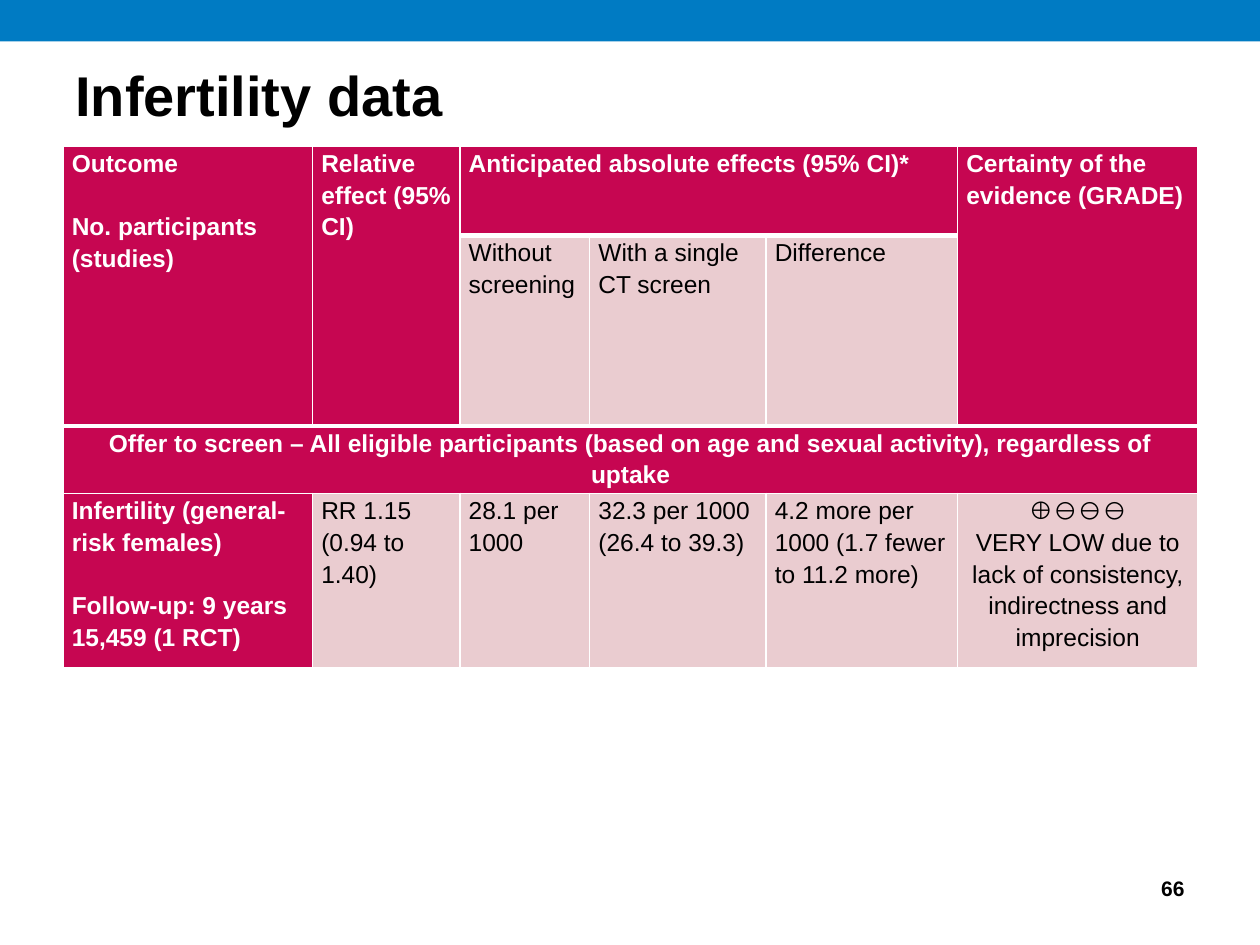
"""Build the infertility data slide with its evidence table."""
from dataclasses import dataclass

from lxml import etree
from pptx import Presentation
from pptx.dml.color import RGBColor
from pptx.enum.shapes import MSO_SHAPE
from pptx.enum.text import MSO_ANCHOR, PP_ALIGN
from pptx.oxml.ns import qn
from pptx.util import Inches, Pt

RECTANGLE = MSO_SHAPE.RECTANGLE
MIDDLE = MSO_ANCHOR.MIDDLE
LEFT, CENTER, RIGHT = PP_ALIGN.LEFT, PP_ALIGN.CENTER, PP_ALIGN.RIGHT
FONT = "Arial"
COLORS = {
    "band": "007BC3",
    "header": "C60651",
    "data": "EACCD0",
    "white": "FFFFFF",
    "black": "000000",
}
COLUMN_WIDTHS = [1.98, 1.17, 1.03, 1.4, 1.52, 1.91]
ROW_HEIGHTS = [0.71, 1.51, 0.5, 1.38]
HEADING_ROWS = 2


@dataclass
class Entry:
    row: int
    column: int
    paragraphs: list[str]
    header: bool = False
    row_span: int = 1
    column_span: int = 1
    align: PP_ALIGN = LEFT
    gap_before: int | None = None


ENTRIES = [
    Entry(0, 0, ["Outcome", "No. participants (studies)"], True, row_span=2, gap_before=1),
    Entry(0, 1, ["Relative effect (95% CI)"], True, row_span=2),
    Entry(0, 2, ["Anticipated absolute effects (95% CI)*"], True, column_span=3),
    Entry(0, 5, ["Certainty of the evidence (GRADE)"], True, row_span=2),
    Entry(1, 2, ["Without screening"]),
    Entry(1, 3, ["With a single CT screen"]),
    Entry(1, 4, ["Difference"]),
    Entry(2, 0, ["Offer to screen – All eligible participants (based on age and "
                 "sexual activity), regardless of uptake"],
          True, column_span=6, align=CENTER),
    Entry(3, 0, ["Infertility (general-risk females)", "Follow-up: 9 years",
                 "15,459 (1 RCT)"], True, gap_before=1),
    Entry(3, 1, ["RR 1.15 (0.94 to 1.40)"]),
    Entry(3, 2, ["28.1 per 1000"]),
    Entry(3, 3, ["32.3 per 1000 (26.4 to 39.3)"]),
    Entry(3, 4, ["4.2 more per 1000 (1.7 fewer to 11.2 more)"]),
    Entry(3, 5, ["⊕⊖⊖⊖", "VERY LOW due to lack of consistency, indirectness "
                 "and imprecision"], align=CENTER),
]


def rgb(name: str) -> RGBColor:
    return RGBColor.from_string(COLORS[name])


def format_runs(paragraph, size: int, color: str, bold: bool) -> None:
    for run in paragraph.runs:
        run.font.name = FONT
        run.font.size = Pt(size)
        run.font.bold = bold
        run.font.color.rgb = rgb(color)


def add_label(slide, box: tuple, text: str, size: int, align: PP_ALIGN) -> None:
    frame = slide.shapes.add_textbox(*map(Inches, box)).text_frame
    frame.word_wrap = True
    frame.vertical_anchor = MIDDLE
    frame.text = text
    frame.paragraphs[0].alignment = align
    format_runs(frame.paragraphs[0], size, "black", True)


def add_borders(cell, top: int, bottom: int) -> None:
    properties = cell._tc.get_or_add_tcPr()
    for side, width in (("L", 1), ("R", 1), ("T", top), ("B", bottom)):
        line = etree.SubElement(properties, qn(f"a:ln{side}"), w=str(Pt(width)))
        fill = etree.SubElement(line, qn("a:solidFill"))
        etree.SubElement(fill, qn("a:srgbClr"), val=COLORS["white"])


def fill_entry(table, entry: Entry) -> None:
    cell = table.cell(entry.row, entry.column)
    if entry.row_span * entry.column_span > 1:
        cell.merge(table.cell(entry.row + entry.row_span - 1,
                              entry.column + entry.column_span - 1))
    cell.fill.solid()
    cell.fill.fore_color.rgb = rgb("header" if entry.header else "data")
    cell.margin_left = cell.margin_right = Inches(0.07)
    cell.margin_top = cell.margin_bottom = 0
    cell.text_frame.text = "\n".join(entry.paragraphs)
    for index, paragraph in enumerate(cell.text_frame.paragraphs):
        paragraph.alignment = entry.align
        paragraph.line_spacing = 1.15
        if index == entry.gap_before:
            paragraph.space_before = Pt(18)
        format_runs(paragraph, 14, "white" if entry.header else "black", entry.header)


def add_evidence_table(slide) -> None:
    table = slide.shapes.add_table(
        len(ROW_HEIGHTS), len(COLUMN_WIDTHS), Inches(0.5), Inches(1.16),
        Inches(sum(COLUMN_WIDTHS)), Inches(sum(ROW_HEIGHTS))).table
    for column, width in zip(table.columns, COLUMN_WIDTHS):
        column.width = Inches(width)
    for index, (row, height) in enumerate(zip(table.rows, ROW_HEIGHTS)):
        row.height = Inches(height)
        top = 3 if 0 < index <= HEADING_ROWS else 1
        bottom = 3 if index < HEADING_ROWS else 1
        for cell in row.cells:
            add_borders(cell, top, bottom)
    for entry in ENTRIES:
        fill_entry(table, entry)


def main() -> None:
    deck = Presentation()
    deck.slide_width, deck.slide_height = Inches(10), Inches(7.5)
    slide = deck.slides.add_slide(deck.slide_layouts[6])
    band = slide.shapes.add_shape(RECTANGLE, 0, 0, Inches(10), Inches(0.33))
    band.shadow.inherit = False
    band.fill.solid()
    band.fill.fore_color.rgb = rgb("band")
    band.line.fill.background()
    add_label(slide, (0.5, 0.33, 9, 0.83), "Infertility data", 32, LEFT)
    add_label(slide, (7.17, 6.85, 2.33, 0.4), "66", 12, RIGHT)
    add_evidence_table(slide)
    deck.save("out.pptx")


if __name__ == "__main__":
    main()
